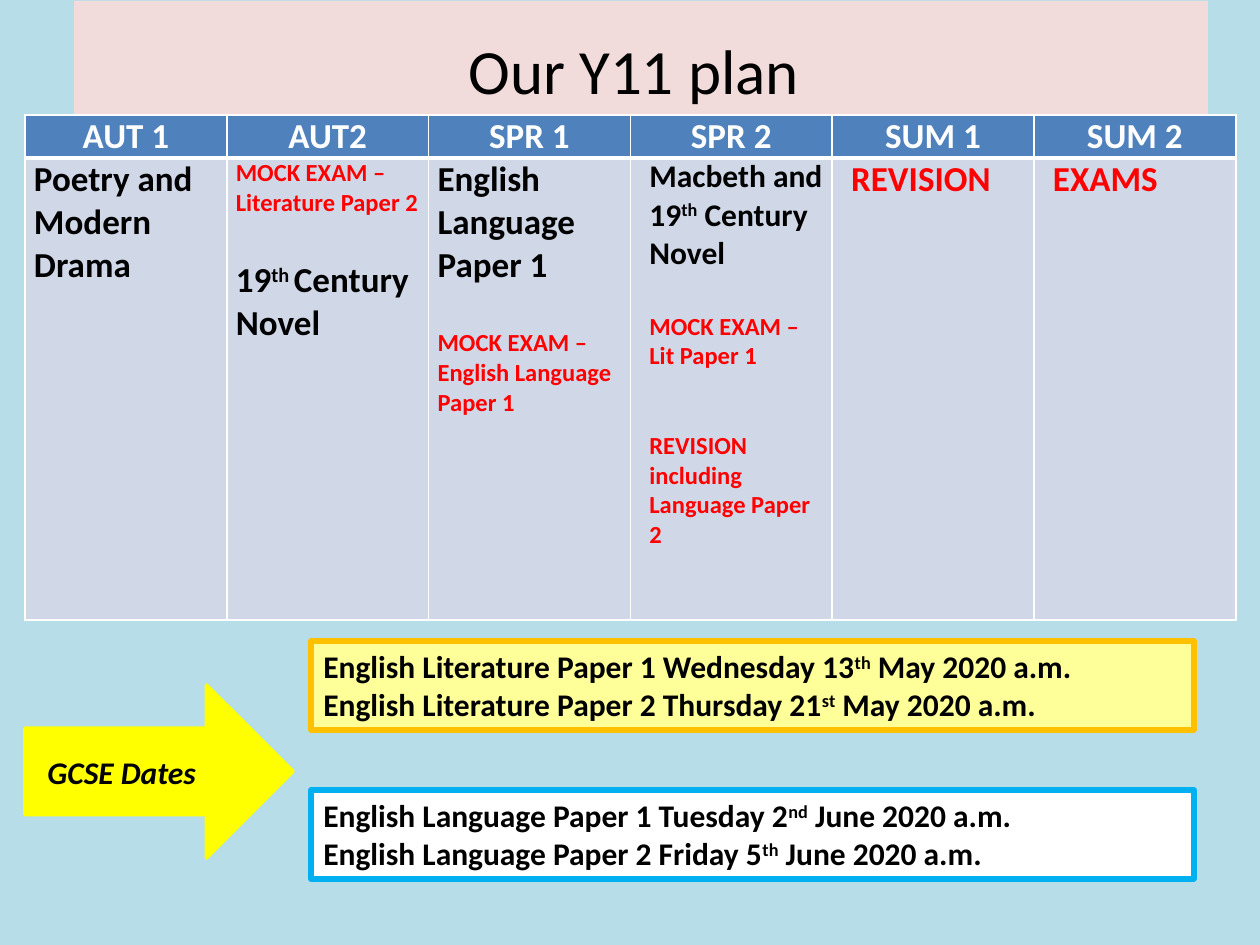
from lxml.etree import SubElement
from pptx import Presentation
from pptx.dml.color import RGBColor
from pptx.enum.shapes import MSO_SHAPE as Shape
from pptx.enum.text import MSO_ANCHOR as Anchor, PP_ALIGN as Align
from pptx.oxml.ns import qn
from pptx.util import Emu, Pt

BLACK, WHITE, RED = "000000", "FFFFFF", "FF0000"
HEADS = ["AUT 1", "AUT2", "SPR 1", "SPR 2", "SUM 1", "SUM 2"]
# Each cell: indent in px, then (text, size, colour, space before in points)
PLANS = [
    (0, [("Poetry and Modern Drama", 20, BLACK, 0)]),
    (0, [("MOCK EXAM – Literature Paper 2", 14, RED, 0),
         ("19^th ^Century Novel", 20, BLACK, 24)]),
    (0, [("English Language Paper 1", 20, BLACK, 0),
         ("MOCK EXAM – English Language Paper 1", 14, RED, 24)]),
    (10, [("Macbeth and 19^th^ Century Novel", 18, BLACK, 0),
          ("MOCK EXAM – Lit Paper 1", 14, RED, 22),
          ("REVISION including Language Paper 2", 14, RED, 34)]),
    (10, [("REVISION", 20, RED, 0)]),
    (10, [("EXAMS", 20, RED, 0)]),
]
# Each box: top in px, fill, line, text lines
DATES = [
    (790, WHITE, "00B0F0",
     ["English Language Paper 1 Tuesday 2^nd^ June 2020 a.m.",
      "English Language Paper 2 Friday 5^th^ June 2020 a.m."]),
    (641, "FFFF99", "FFC000",
     ["English Literature Paper 1 Wednesday 13^th^ May 2020 a.m.",
      "English Literature Paper 2 Thursday 21^st^ May 2020 a.m."]),
]


def px(n):
    return Emu(round(n * 914400 / 126))


def paint(fill, tone):
    fill.solid()
    fill.fore_color.rgb = RGBColor.from_string(tone)


def write(par, text, size, tone=BLACK, bold=True, align=Align.LEFT):
    """Fill a paragraph; text between carets is superscript."""
    par.alignment = align
    font = par.font
    font.name, font.size, font.bold = "Calibri", Pt(size), bold
    font.color.rgb = RGBColor.from_string(tone)
    for i, part in enumerate(text.split("^")):
        run = par.add_run()
        run.text = part
        if i % 2:
            run._r.get_or_add_rPr().set("baseline", "30000")


def next_par(frame, i):
    return frame.add_paragraph() if i else frame.paragraphs[0]


def add_title(slide, text):
    title = slide.shapes.title
    title.left, title.top = px(74), px(1)
    title.width, title.height = px(1134), px(137)
    paint(title.fill, "F2DCDB")
    title.text_frame.vertical_anchor = Anchor.MIDDLE
    write(title.text_frame.paragraphs[0], text, 36, bold=False,
          align=Align.CENTER)


def add_block(slide, kind, box, fill, line, width):
    block = slide.shapes.add_shape(kind, *map(px, box))
    block.shadow.inherit = False
    paint(block.fill, fill)
    block.line.color.rgb = RGBColor.from_string(line)
    block.line.width = Pt(width)
    return block


def add_dates(slide, top, fill, line, lines):
    box = (311, top, 883, 89)
    frame = add_block(slide, Shape.RECTANGLE, box, fill, line, 3).text_frame
    frame.word_wrap = True
    frame.vertical_anchor = Anchor.TOP
    for i, text in enumerate(lines):
        write(next_par(frame, i), text, 18)


def style_cell(cell, fill, base):
    """Set margins, white borders (base is the bottom width) and fill."""
    cell.margin_left = cell.margin_right = px(9)
    cell.margin_top = cell.margin_bottom = 0
    props = cell._tc.get_or_add_tcPr()
    for side, width in zip("LRTB", (1, 1, 1, base)):
        edge = SubElement(props, qn("a:ln" + side), w=str(Pt(width)))
        solid = SubElement(edge, qn("a:solidFill"))
        SubElement(solid, qn("a:srgbClr"), val=WHITE)
    paint(cell.fill, fill)


def add_plan(slide):
    table = slide.shapes.add_table(
        2, len(HEADS), px(25), px(115), px(1211), px(505)).table
    table.rows[0].height, table.rows[1].height = px(43), px(462)
    for col, (head, (indent, items)) in enumerate(zip(HEADS, PLANS)):
        top, body = table.cell(0, col), table.cell(1, col)
        style_cell(top, "4F81BD", 3)
        style_cell(body, "D0D8E8", 1)
        write(top.text_frame.paragraphs[0], head, 20, WHITE,
              align=Align.CENTER)
        for i, (text, size, tone, gap) in enumerate(items):
            par = next_par(body.text_frame, i)
            par.space_before = Pt(gap)
            write(par, text, size, tone)
            par._p.get_or_add_pPr().set("marL", str(px(indent)))


def add_label(slide, text):
    frame = slide.shapes.add_textbox(*map(px, (35, 747, 208, 50))).text_frame
    frame.word_wrap = True
    par = frame.paragraphs[0]
    write(par, text, 18)
    par.font.italic = True


def main():
    deck = Presentation()
    deck.slide_width, deck.slide_height = px(1260), px(945)
    slide = deck.slides.add_slide(deck.slide_layouts[5])
    paint(slide.background.fill, "B7DEE8")

    add_title(slide, "Our Y11 plan ")

    # Exam dates and the arrow pointing at them
    for item in DATES:
        add_dates(slide, *item)
    add_block(slide, Shape.RIGHT_ARROW, (25, 685, 268, 173),
              "FFFF00", "FFFF00", 2)

    # Plan for each half term
    add_plan(slide)
    add_label(slide, "GCSE Dates")
    deck.save("out.pptx")


if __name__ == "__main__":
    main()
